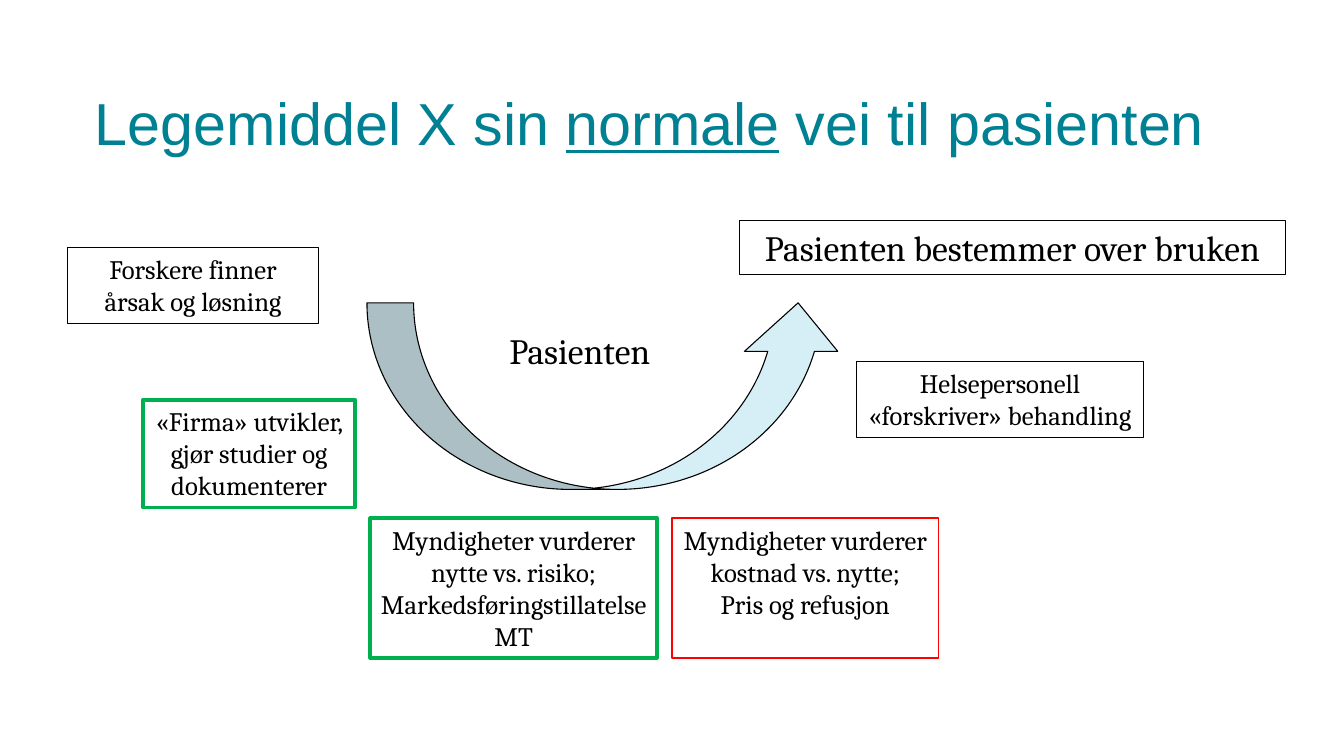
from dataclasses import dataclass
from pptx import Presentation
from pptx.dml.color import RGBColor
from pptx.enum.shapes import MSO_SHAPE
from pptx.enum.text import MSO_ANCHOR, PP_ALIGN
from pptx.util import Inches, Pt


@dataclass
class Theme:
    teal: str = "008193"
    black: str = "000000"
    green: str = "00B050"
    red: str = "FF0000"
    pale: str = "D6EFF7"
    head: str = "Arial"
    body: str = "Cambria"
    big: int = 40
    mid: int = 24
    small: int = 18


theme = Theme()


def add_run(para, text, font, size, color):
    run = para.add_run()
    run.text = text
    run.font.name = font
    run.font.size = Pt(size)
    run.font.color.rgb = RGBColor.from_string(color)
    return run


def fill_text(shape, lines, size):
    frame = shape.text_frame
    frame.word_wrap = True
    frame.vertical_anchor = MSO_ANCHOR.TOP
    for i, line in enumerate(lines):
        para = frame.add_paragraph() if i else frame.paragraphs[0]
        para.alignment = PP_ALIGN.CENTER
        add_run(para, line, theme.body, size, theme.black)


deck = Presentation()
deck.slide_width, deck.slide_height = Inches(12.6), Inches(7.09)
slide = deck.slides.add_slide(deck.slide_layouts[5])
shapes = slide.shapes

title = shapes.title
title.left, title.top = Inches(0.79), Inches(0.71)
title.width, title.height = Inches(11.26), Inches(0.95)
title.text_frame.vertical_anchor = MSO_ANCHOR.MIDDLE
para = title.text_frame.paragraphs[0]
para.alignment = PP_ALIGN.LEFT
para.line_spacing = 0.9
for text, under in [("Legemiddel X sin ", False), ("normale", True), (" vei til pasienten", False)]:
    run = add_run(para, text, theme.head, theme.big, theme.teal)
    run.font.underline = under

steps = [
    (1.34, 3.75, 1.99, 1.01, theme.green, 2.5, theme.small,
     ["«Firma» utvikler, gjør studier og dokumenterer"]),
    (0.63, 2.32, 2.36, 0.71, theme.black, 0.5, theme.small,
     ["Forskere finner årsak og løsning"]),
    (3.47, 4.86, 2.69, 1.31, theme.green, 2.5, theme.small,
     ["Myndigheter vurderer nytte vs. risiko;", "Markedsføringstillatelse MT"]),
    (6.3, 4.86, 2.5, 1.31, theme.red, 1, theme.small,
     ["Myndigheter vurderer kostnad vs. nytte;", "Pris og refusjon"]),
    (8.03, 3.39, 2.69, 0.71, theme.black, 0.25, theme.small,
     ["Helsepersonell «forskriver» behandling"]),
    (6.93, 2.07, 5.12, 0.5, theme.black, 0.25, theme.mid,
     ["Pasienten bestemmer over bruken"]),
]
for left, top, width, height, color, weight, size, lines in steps:
    box = shapes.add_shape(MSO_SHAPE.RECTANGLE, Inches(left), Inches(top),
                           Inches(width), Inches(height))
    box.shadow.inherit = False
    box.fill.background()
    box.line.color.rgb = RGBColor.from_string(color)
    box.line.width = Pt(weight)
    fill_text(box, lines, size)

arrow = shapes.add_shape(MSO_SHAPE.CURVED_UP_ARROW, Inches(3.44), Inches(2.84),
                         Inches(4.48), Inches(1.75))
arrow.shadow.inherit = False
for i, value in enumerate([0.25, 0.5, 0.26]):
    arrow.adjustments[i] = value
arrow.fill.solid()
arrow.fill.fore_color.rgb = RGBColor.from_string(theme.pale)
arrow.line.color.rgb = RGBColor.from_string(theme.black)
arrow.line.width = Pt(0.75)

label = shapes.add_textbox(Inches(4.49), Inches(3.04), Inches(1.89), Inches(0.5))
fill_text(label, ["Pasienten"], theme.mid)

deck.save("out.pptx")
